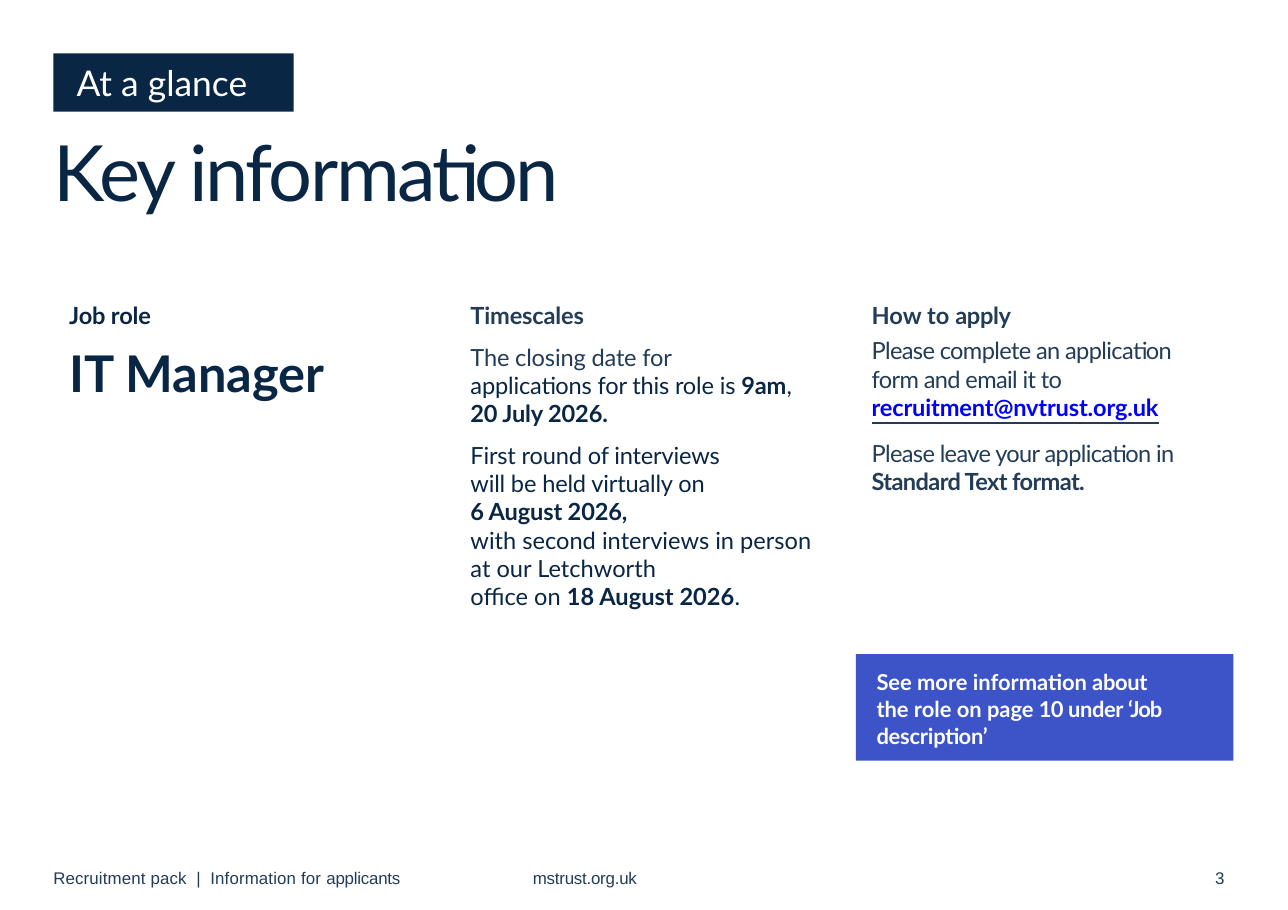
from dataclasses import dataclass, field

from lxml.etree import SubElement
from pptx import Presentation
from pptx.dml.color import RGBColor as RGB
from pptx.enum.shapes import MSO_SHAPE as SHAPE
from pptx.enum.text import MSO_ANCHOR as ANCHOR
from pptx.oxml.ns import qn
from pptx.util import Inches, Pt

COLORS = {
    "navy": "0A2645",
    "slate": "233C57",
    "indigo": "3D54C9",
    "link": "0000FF",
    "white": "FFFFFF",
}
W, H = 10.61, 7.5

# Grid, in percent of the slide's width and height
LEFT, COL_W, COL_STEP = 4.15, 29.31, 31.15
CARD_Y, CARD_H = 31.47, 37.6
FOOT_Y, FOOT_H = 95.33, 2.8


@dataclass
class Run:
    text: str
    fmt: dict = field(default_factory=dict)


@dataclass
class Para:
    runs: list[Run]
    before: float = 0
    line: float = 1
    indent: float = 0.01


@dataclass
class Box:
    x: float
    y: float
    w: float
    h: float
    paras: list[Para]
    fill: str | None = None
    insets: tuple[float, float, float, float] = (0, 0, 0, 0)
    anchor: ANCHOR = ANCHOR.TOP


def run(text: str, **fmt) -> Run:
    return Run(text, fmt)


def add_text(p, text: str, *, size: float = 14, font: str = "Lato",
             color: str = "slate", bold: bool = False, spacing: float = 0,
             underline: str | None = None) -> None:
    """Add text to a paragraph; each newline becomes a line break."""
    for i, part in enumerate(text.split("\n")):
        if i:
            p.add_line_break()
        if not part:
            continue
        r = p.add_run()
        r.text = part
        f = r.font
        f.size, f.bold = Pt(size), bold
        f.color.rgb = RGB.from_string(COLORS[color])
        rpr = r._r.get_or_add_rPr()
        rpr.set("spc", str(round(spacing * 100)))
        if underline:
            f.underline = True
            fill = SubElement(SubElement(rpr, qn("a:uFill")), qn("a:solidFill"))
            SubElement(fill, qn("a:srgbClr")).set("val", COLORS[underline])
        f.name = font


def add_box(s, box: Box) -> None:
    frame = [Inches(v * side / 100) for v, side in
             ((box.x, W), (box.y, H), (box.w, W), (box.h, H))]
    if box.fill:
        sp = s.shapes.add_shape(SHAPE.RECTANGLE, *frame)
        sp.shadow.inherit = False
        sp.fill.solid()
        sp.fill.fore_color.rgb = RGB.from_string(COLORS[box.fill])
        sp.line.fill.background()
    else:
        sp = s.shapes.add_textbox(*frame)
    tf = sp.text_frame
    tf.word_wrap = True
    tf.vertical_anchor = box.anchor
    tf.margin_left, tf.margin_top, tf.margin_right, tf.margin_bottom = map(
        Inches, box.insets)
    for i, para in enumerate(box.paras):
        p = tf.add_paragraph() if i else tf.paragraphs[0]
        ppr = p._p.get_or_add_pPr()
        ppr.set("algn", "l")
        ppr.set("marL", str(Inches(para.indent)))
        p.space_before, p.line_spacing = Pt(para.before), para.line
        for item in para.runs:
            add_text(p, item.text, **item.fmt)


def card(col: int, paras: list[Para], right: float = 0.12) -> Box:
    return Box(LEFT + col * COL_STEP, CARD_Y, COL_W, CARD_H, paras,
               "white", (0.12, 0.12, right, 0.12))


def footer(x: float, w: float, *runs: Run) -> Box:
    for r in runs:
        r.fmt = {"size": 10, "font": "Arial", **r.fmt}
    return Box(x, FOOT_Y, w, FOOT_H, [Para(list(runs))])


NAVY = {"color": "navy", "spacing": -0.1}
NAVY_BOLD = {**NAVY, "bold": True}
HEAD = {"bold": True, "spacing": -0.1}
TIGHT = {"spacing": -0.4}
CALL = {"size": 13, "color": "white", "bold": True}

BOXES = [
    # Section label and title
    Box(LEFT, 5.87, 18.66, 6.4,
        [Para([run("At a glance", size=21, color="white")], indent=0.19)],
        "navy", anchor=ANCHOR.MIDDLE),
    Box(LEFT, 14.8, 54.95, 9.47,
        [Para([run("Key information", size=46, color="navy", spacing=-1.5)],
              line=0.9, indent=0)]),
    # Footer
    footer(4.05, 28.75, run("Recruitment pack", spacing=0.1),
           run(" |", spacing=2.8), run(" Information for ", spacing=0.1),
           run("applicants", spacing=-0.1)),
    footer(41.28, 9.05, run("mstrust.org.uk", spacing=-0.1)),
    footer(94.25, 1.98, run("3", spacing=-0.2)),
    # Three columns of key facts
    card(0, [
        Para([run("Job role", **NAVY_BOLD)]),
        Para([run("IT Manager", size=30, color="navy", bold=True)], 7.8),
    ]),
    card(1, [
        Para([run("Timescales", **HEAD)]),
        Para([run("The closing date for\n", spacing=-0.1),
              run("applications for this role is ", **NAVY),
              run("9am", **NAVY_BOLD), run(",\n", **NAVY),
              run("20 July 2026.", **NAVY_BOLD)], 7.8),
        Para([run("First round of interviews\nwill be held virtually on\n", **NAVY),
              run("6 August 2026,\n", **NAVY_BOLD),
              run("with second interviews in person at our Letchworth\noffice on ",
                  color="navy"),
              run("18 August 2026", color="navy", bold=True),
              run(".", color="navy")], 7.8),
    ]),
    card(2, [
        Para([run("How to ", bold=True), run("apply", bold=True, spacing=-0.2)]),
        Para([run("Please complete an application form and email it to ", **TIGHT),
              run("recruitment@nvtrust.org.uk", color="link", bold=True,
                  spacing=-0.1, underline="slate")], 4, 1.01),
        Para([run("Please leave your application in ", **TIGHT),
              run("Standard Text format.", bold=True, **TIGHT)], 10, 1.01),
    ], right=0.3),
    # Callout under the last column
    Box(LEFT + 2 * COL_STEP, 71.87, COL_W, 11.73,
        [Para([run("See more information ", **CALL),
               run("about ", spacing=-0.2, **CALL),
               run("the role on page ", **CALL),
               run("10 ", spacing=-0.4, **CALL),
               run("under ", spacing=-0.2, **CALL),
               run("‘Job ", spacing=-0.6, **CALL),
               run("description’", spacing=-0.1, **CALL)],
              line=1.03, indent=0.17)],
        "indigo", (0, 0.11, 0.5, 0)),
]


def main() -> None:
    prs = Presentation()
    prs.slide_width, prs.slide_height = Inches(W), Inches(H)
    s = prs.slides.add_slide(prs.slide_layouts[6])
    for box in BOXES:
        add_box(s, box)
    prs.save("out.pptx")


if __name__ == "__main__":
    main()
